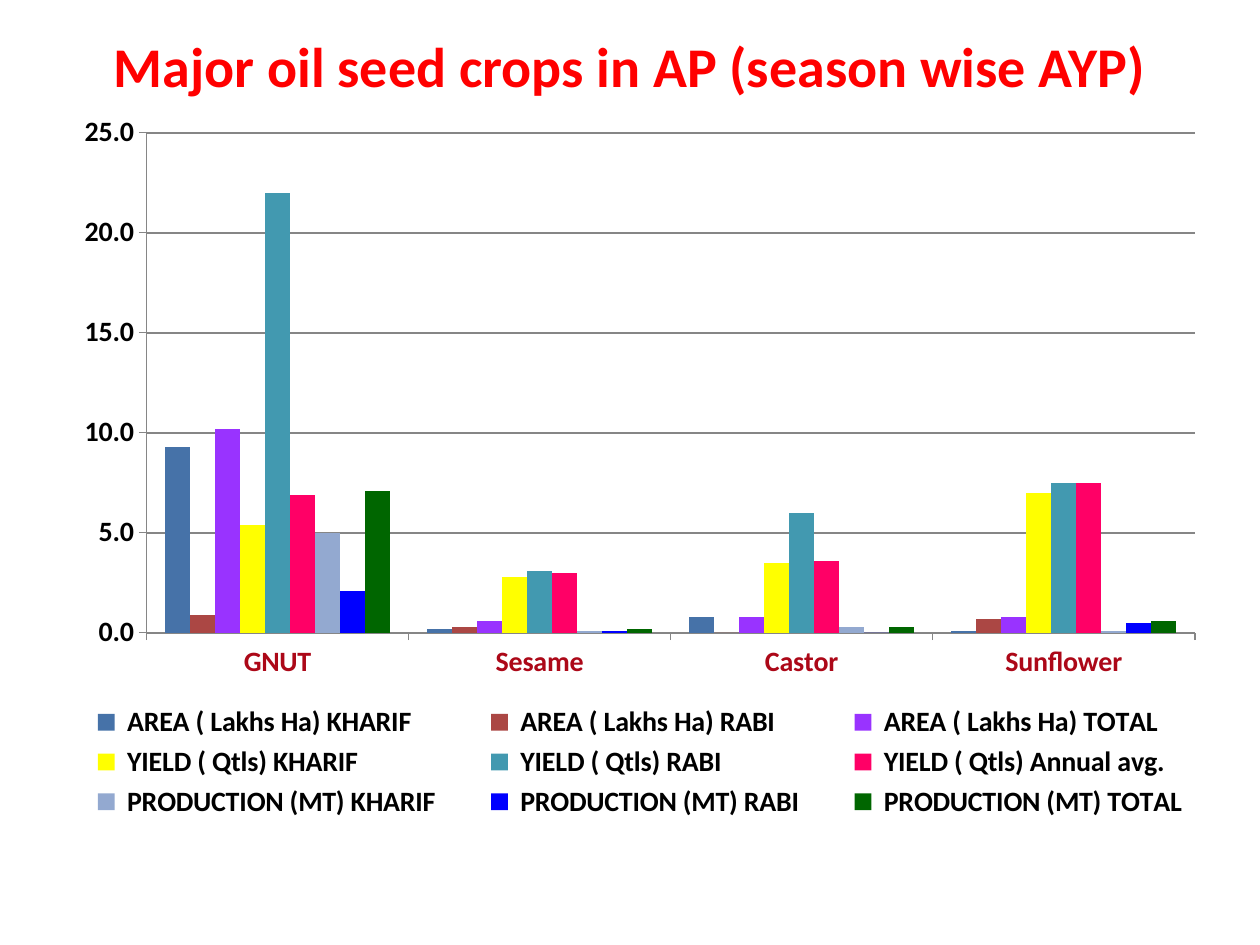
from dataclasses import dataclass

from lxml import etree
from pptx import Presentation
from pptx import util as u
from pptx.chart.data import CategoryChartData
from pptx.dml.color import RGBColor
from pptx.enum import chart as ch
from pptx.enum import text
from pptx.oxml.ns import qn

RED = RGBColor(0xFF, 0x00, 0x00)
CRIMSON = RGBColor(0xAC, 0x08, 0x18)
BLACK = RGBColor(0x00, 0x00, 0x00)
GRAY = RGBColor(0x86, 0x86, 0x86)
BLUE = RGBColor(0x46, 0x72, 0xA8)
BRICK = RGBColor(0xAB, 0x47, 0x44)
PURPLE = RGBColor(0x99, 0x33, 0xFF)
YELLOW = RGBColor(0xFF, 0xFF, 0x00)
TEAL = RGBColor(0x42, 0x99, 0xB0)
PINK = RGBColor(0xFF, 0x00, 0x66)
PALE_BLUE = RGBColor(0x93, 0xA9, 0xD0)
PURE_BLUE = RGBColor(0x00, 0x00, 0xFF)
GREEN = RGBColor(0x00, 0x66, 0x00)

FONT = "Calibri"
WIDTH, HEIGHT = u.Inches(10), u.Inches(7.5)
CROPS = ("GNUT", "Sesame", "Castor", "Sunflower")


@dataclass(frozen=True)
class Shares:
    x: float
    y: float
    w: float
    h: float


@dataclass(frozen=True)
class Series:
    name: str
    values: tuple[float, ...]
    color: RGBColor


PLOT = Shares(0.096, 0.051, 0.876, 0.667)
LEGEND = Shares(0.017, 0.807, 0.985, 0.167)
SERIES = (
    Series(" AREA ( Lakhs Ha) KHARIF", (9.3, 0.2, 0.8, 0.1), BLUE),
    Series(" AREA ( Lakhs Ha) RABI", (0.9, 0.3, 0, 0.7), BRICK),
    Series(" AREA ( Lakhs Ha) TOTAL", (10.2, 0.6, 0.8, 0.8), PURPLE),
    Series(" YIELD ( Qtls) KHARIF", (5.4, 2.8, 3.5, 7), YELLOW),
    Series(" YIELD ( Qtls) RABI", (22, 3.1, 6, 7.5), TEAL),
    Series(" YIELD ( Qtls) Annual avg.", (6.9, 3, 3.6, 7.5), PINK),
    Series(" PRODUCTION (MT) KHARIF", (5, 0.1, 0.3, 0.1), PALE_BLUE),
    Series(" PRODUCTION (MT) RABI", (2.1, 0.1, 0, 0.5), PURE_BLUE),
    Series(" PRODUCTION (MT) TOTAL", (7.1, 0.2, 0.3, 0.6), GREEN),
)


def set_font(font, size: float, color: RGBColor) -> None:
    font.name = FONT
    font.size = u.Pt(size)
    font.bold = True
    font.color.rgb = color


def set_line(line, width: float) -> None:
    line.color.rgb = GRAY
    line.width = u.Pt(width)


def style_axis(axis, color: RGBColor) -> None:
    axis.major_tick_mark = ch.XL_TICK_MARK.OUTSIDE
    axis.minor_tick_mark = ch.XL_TICK_MARK.NONE
    set_font(axis.tick_labels.font, 16, color)
    set_line(axis.format.line, 0.75)


def place_part(part, index: int, shares: Shares, inner: bool) -> None:
    for old in part.findall(qn("c:layout")):
        part.remove(old)
    layout = etree.Element(qn("c:layout"))
    manual = etree.SubElement(layout, qn("c:manualLayout"))
    settings = {"layoutTarget": "inner"} if inner else {}
    settings |= {"xMode": "edge", "yMode": "edge"}
    settings |= {"x": shares.x, "y": shares.y, "w": shares.w, "h": shares.h}
    for tag, value in settings.items():
        etree.SubElement(manual, qn(f"c:{tag}")).set("val", str(value))
    part.insert(index, layout)


def add_title(s, title: str) -> None:
    sp = s.shapes.add_textbox(
        int(WIDTH * 0.05), u.Inches(0.18), int(WIDTH * 0.9), u.Inches(0.67)
    )
    tf = sp.text_frame
    tf.word_wrap = True
    tf.vertical_anchor = text.MSO_ANCHOR.MIDDLE
    p = tf.paragraphs[0]
    p.text = title
    p.alignment = text.PP_ALIGN.CENTER
    set_font(p.font, 32, RED)


def add_crop_chart(s) -> None:
    data = CategoryChartData(number_format="0.0")
    data.categories = CROPS
    for item in SERIES:
        data.add_series(item.name, item.values)
    chart = s.shapes.add_chart(
        ch.XL_CHART_TYPE.COLUMN_CLUSTERED,
        int(WIDTH * 0.025), int(HEIGHT * 0.1), int(WIDTH * 0.95), u.Inches(5.95),
        data,
    ).chart
    chart.has_title = False
    chart.font.name = FONT
    chart.font.size = u.Pt(10)
    chart.font.color.rgb = BLACK

    plot = chart.plots[0]
    plot.gap_width = 150
    plot.overlap = 0
    plot.vary_by_categories = False
    for series, item in zip(plot.series, SERIES):
        series.invert_if_negative = False
        series.format.fill.solid()
        series.format.fill.fore_color.rgb = item.color

    style_axis(chart.category_axis, CRIMSON)
    values = chart.value_axis
    style_axis(values, BLACK)
    values.minimum_scale, values.maximum_scale, values.major_unit = 0, 25, 5
    values.tick_labels.number_format = "0.0"
    values.tick_labels.number_format_is_linked = False
    values.has_major_gridlines = True
    set_line(values.major_gridlines.format.line, 1)

    chart.has_legend = True
    chart.legend.position = ch.XL_LEGEND_POSITION.BOTTOM
    chart.legend.include_in_layout = False
    set_font(chart.legend.font, 16, BLACK)

    root = chart._chartSpace
    place_part(root.find(f".//{qn('c:plotArea')}"), 0, PLOT, True)
    place_part(root.find(f".//{qn('c:legend')}"), 1, LEGEND, False)


def main() -> None:
    prs = Presentation()
    prs.slide_width, prs.slide_height = WIDTH, HEIGHT
    s = prs.slides.add_slide(prs.slide_layouts[6])
    add_crop_chart(s)
    add_title(s, "Major oil seed crops in AP (season wise AYP)")
    prs.save("out.pptx")


if __name__ == "__main__":
    main()
